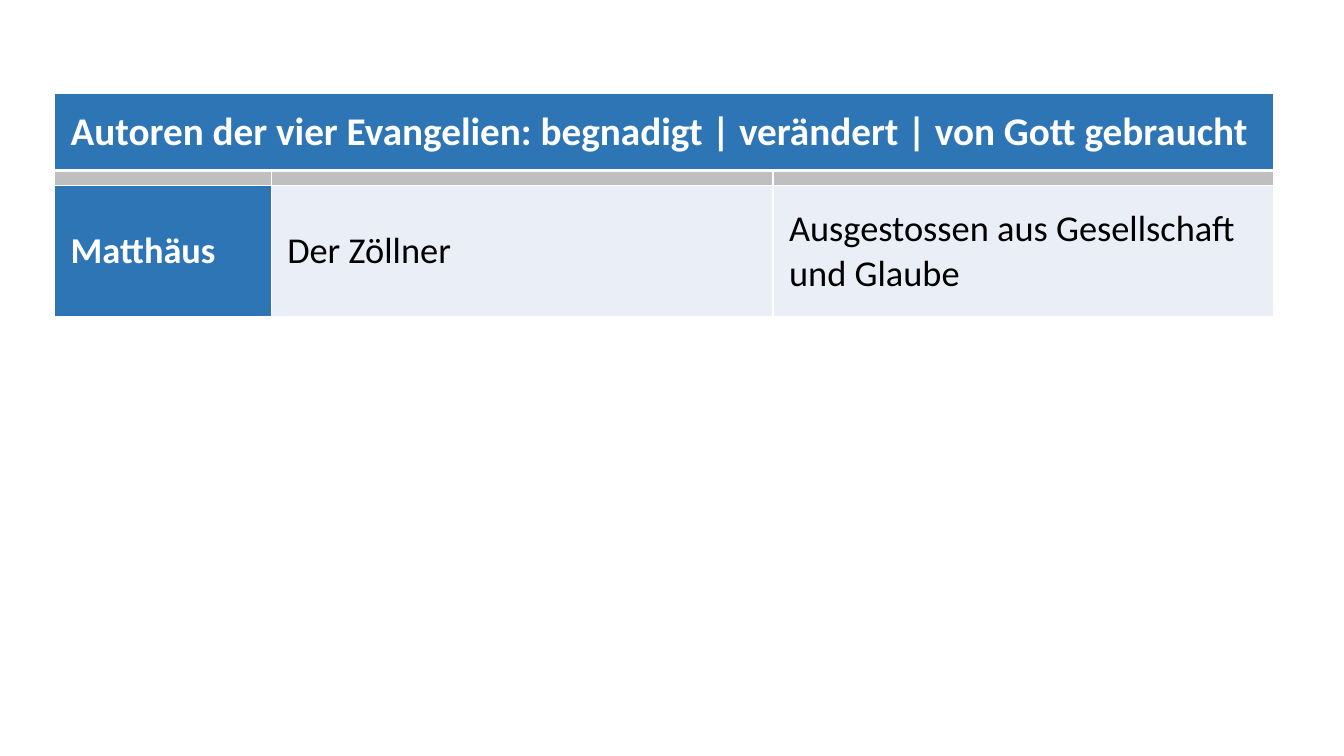
from dataclasses import dataclass

from lxml.etree import SubElement
from pptx import Presentation
from pptx.dml.color import RGBColor
from pptx.enum.text import MSO_ANCHOR, PP_ALIGN
from pptx.oxml.ns import qn
from pptx.util import Pt


@dataclass(frozen=True)
class Theme:
    font: str = "Calibri"
    blue: str = "2E75B6"
    gray: str = "BFBFBF"
    pale: str = "EAEFF7"
    white: str = "FFFFFF"
    black: str = "000000"
    heading_size: int = 28
    body_size: int = 26
    spacer_size: int = 4


THEME = Theme()
COLUMN_SHARES = (2.15, 4.98, 4.97)
ROW_HEIGHTS = (54.7, 10.8, 94)
HEADING = "Autoren der vier Evangelien: begnadigt | verändert | von Gott gebraucht"
AUTHOR = (
    (["Matthäus"], THEME.blue, THEME.white, True),
    (["Der Zöllner"], THEME.pale, THEME.black, False),
    (["Ausgestossen aus Gesellschaft", "und Glaube"], THEME.pale, THEME.black, False),
)


def border_cell(cell, bottom_width):
    properties = cell._tc.get_or_add_tcPr()
    for position, (side, width) in enumerate(
        (("lnL", 1), ("lnR", 1), ("lnT", 1), ("lnB", bottom_width))
    ):
        line = SubElement(properties, qn(f"a:{side}"), w=str(Pt(width)))
        color = SubElement(SubElement(line, qn("a:solidFill")), qn("a:srgbClr"))
        color.set("val", THEME.white)
        properties.insert(position, line)


def style_cell(cell, fill, bottom_width=1):
    cell.fill.solid()
    cell.fill.fore_color.rgb = RGBColor.from_string(fill)
    cell.vertical_anchor = MSO_ANCHOR.MIDDLE
    cell.margin_left = cell.margin_right = Pt(11.5)
    cell.margin_top = cell.margin_bottom = 0
    border_cell(cell, bottom_width)


def write_cell(cell, lines, size, color, bold, align=PP_ALIGN.LEFT):
    frame = cell.text_frame
    for index, line in enumerate(lines):
        paragraph = frame.add_paragraph() if index else frame.paragraphs[0]
        paragraph.alignment = align
        run = paragraph.add_run()
        run.text = line
        run.font.name = THEME.font
        run.font.size = Pt(size)
        run.font.bold = bold
        run.font.color.rgb = RGBColor.from_string(color)


def fill_heading(table):
    for cell in table.rows[0].cells:
        style_cell(cell, THEME.blue, 3)
    heading = table.cell(0, 0)
    heading.merge(table.cell(0, len(COLUMN_SHARES) - 1))
    write_cell(heading, [HEADING], THEME.heading_size, THEME.white, True, PP_ALIGN.JUSTIFY)


def fill_spacer(table):
    for cell in table.rows[1].cells:
        style_cell(cell, THEME.gray)
        paragraph = cell.text_frame.paragraphs[0]
        SubElement(paragraph._p, qn("a:endParaRPr"), sz=str(THEME.spacer_size * 100))


def fill_author(table):
    for cell, (lines, fill, color, bold) in zip(table.rows[2].cells, AUTHOR):
        style_cell(cell, fill)
        write_cell(cell, lines, THEME.body_size, color, bold)


def add_authors(slide, left, top, width):
    table = slide.shapes.add_table(
        len(ROW_HEIGHTS), len(COLUMN_SHARES),
        Pt(left), Pt(top), Pt(width), Pt(sum(ROW_HEIGHTS)),
    ).table
    for column, share in zip(table.columns, COLUMN_SHARES):
        column.width = Pt(width * share / sum(COLUMN_SHARES))
    for row, height in zip(table.rows, ROW_HEIGHTS):
        row.height = Pt(height)
    fill_heading(table)
    fill_spacer(table)
    fill_author(table)


def main():
    deck = Presentation()
    deck.slide_width, deck.slide_height = Pt(960), Pt(540)
    slide = deck.slides.add_slide(deck.slide_layouts[6])
    add_authors(slide, left=39, top=67, width=870.8)
    deck.save("out.pptx")


if __name__ == "__main__":
    main()
